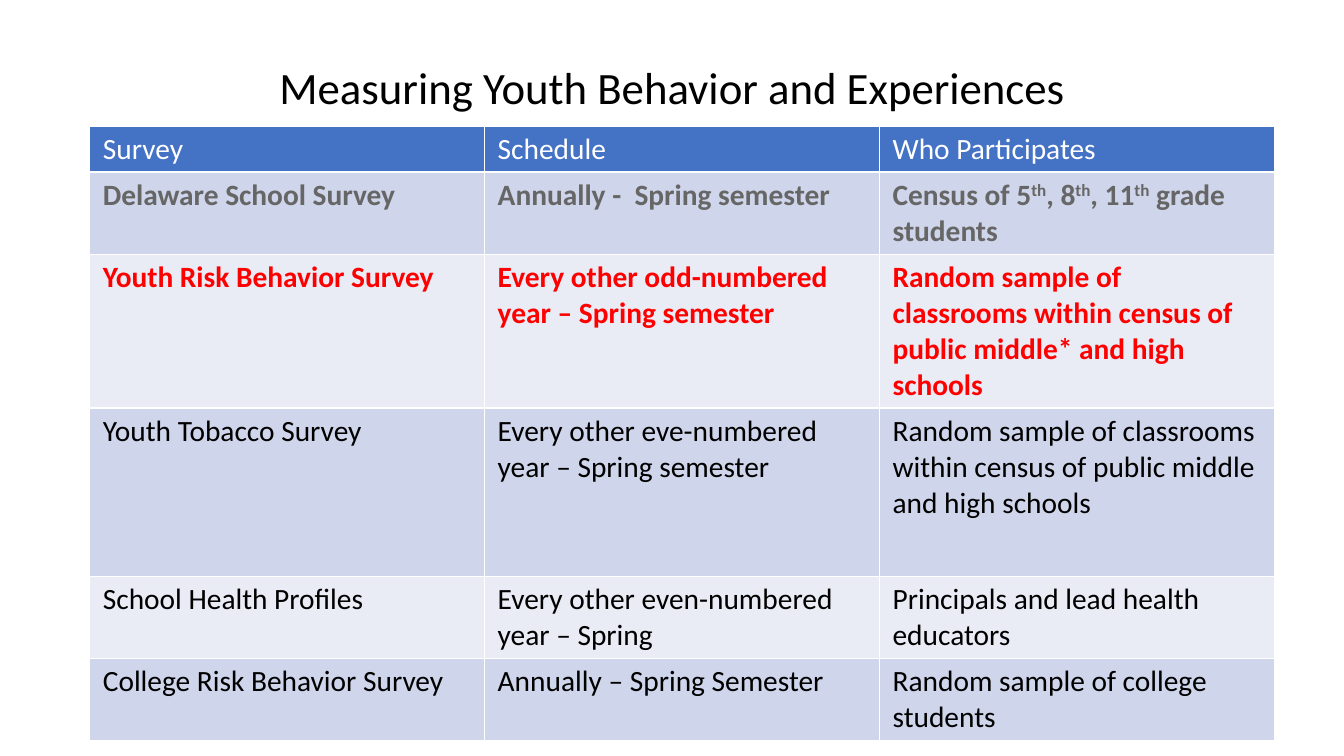
from pptx import Presentation
from pptx.dml.color import RGBColor
from pptx.enum import text
from pptx.util import Inches, Pt

WHITE = RGBColor(0xFF, 0xFF, 0xFF)
BLACK = RGBColor(0, 0, 0)
GRAY = RGBColor(0x66, 0x66, 0x66)
RED = RGBColor(0xFF, 0, 0)
BLUE = RGBColor(0x44, 0x72, 0xC4)
BANDS = [RGBColor(0xE9, 0xEB, 0xF5), RGBColor(0xCF, 0xD5, 0xEA)]


def write(frame, words, size=21, color=BLACK, bold=False):
    """Write words into a frame; parts between ^ marks are superscript."""
    para = frame.paragraphs[0]
    for i, part in enumerate(words.split("^")):
        run = para.add_run()
        run.text = part
        font = run.font
        font.name = "Calibri"
        font.size = Pt(size)
        font.bold = bold
        font.color.rgb = color
        if i % 2:
            font._element.set("baseline", "30000")
    return para


deck = Presentation()
deck.slide_width = Inches(13.33)
deck.slide_height = Inches(7.5)
slide = deck.slides.add_slide(deck.slide_layouts[6])

# Survey rows: height, text color, bold, cells
rows = [
    (0.4, WHITE, False, ["Survey", "Schedule", "Who Participates"]),
    (0.72, GRAY, True, [
        "Delaware School Survey",
        "Annually -  Spring semester",
        "Census of 5^th^, 8^th^, 11^th^ grade students"]),
    (1.35, RED, True, [
        "Youth Risk Behavior Survey",
        "Every other odd-numbered year – Spring semester",
        "Random sample of classrooms within census of public middle* and high schools"]),
    (1.67, BLACK, False, [
        "Youth Tobacco Survey",
        "Every other eve-numbered year – Spring semester",
        "Random sample of classrooms within census of public middle and high schools"]),
    (0.72, BLACK, False, [
        "School Health Profiles",
        "Every other even-numbered year – Spring",
        "Principals and lead health educators"]),
    (0.72, BLACK, False, [
        "College Risk Behavior Survey",
        "Annually – Spring Semester",
        "Random sample of college students"]),
]

# Survey table
table = slide.shapes.add_table(len(rows), 3, Inches(0.89), Inches(1.25),
                               Inches(11.75), Inches(5.58)).table
for r, (height, color, bold, cells) in enumerate(rows):
    table.rows[r].height = Inches(height)
    for c, words in enumerate(cells):
        cell = table.cell(r, c)
        cell.margin_left = cell.margin_right = Inches(0.13)
        cell.margin_top = cell.margin_bottom = Inches(0.05)
        cell.fill.solid()
        cell.fill.fore_color.rgb = BANDS[r % 2] if r else BLUE
        write(cell.text_frame, words, color=color, bold=bold)

# Title
title = slide.shapes.add_textbox(Inches(0.92), Inches(0.4), Inches(11.5), Inches(0.99))
frame = title.text_frame
frame.word_wrap = True
frame.vertical_anchor = text.MSO_ANCHOR.MIDDLE
head = write(frame, "Measuring Youth Behavior and Experiences", size=32)
head.alignment = text.PP_ALIGN.CENTER
head.line_spacing = 0.9

deck.save("out.pptx")
